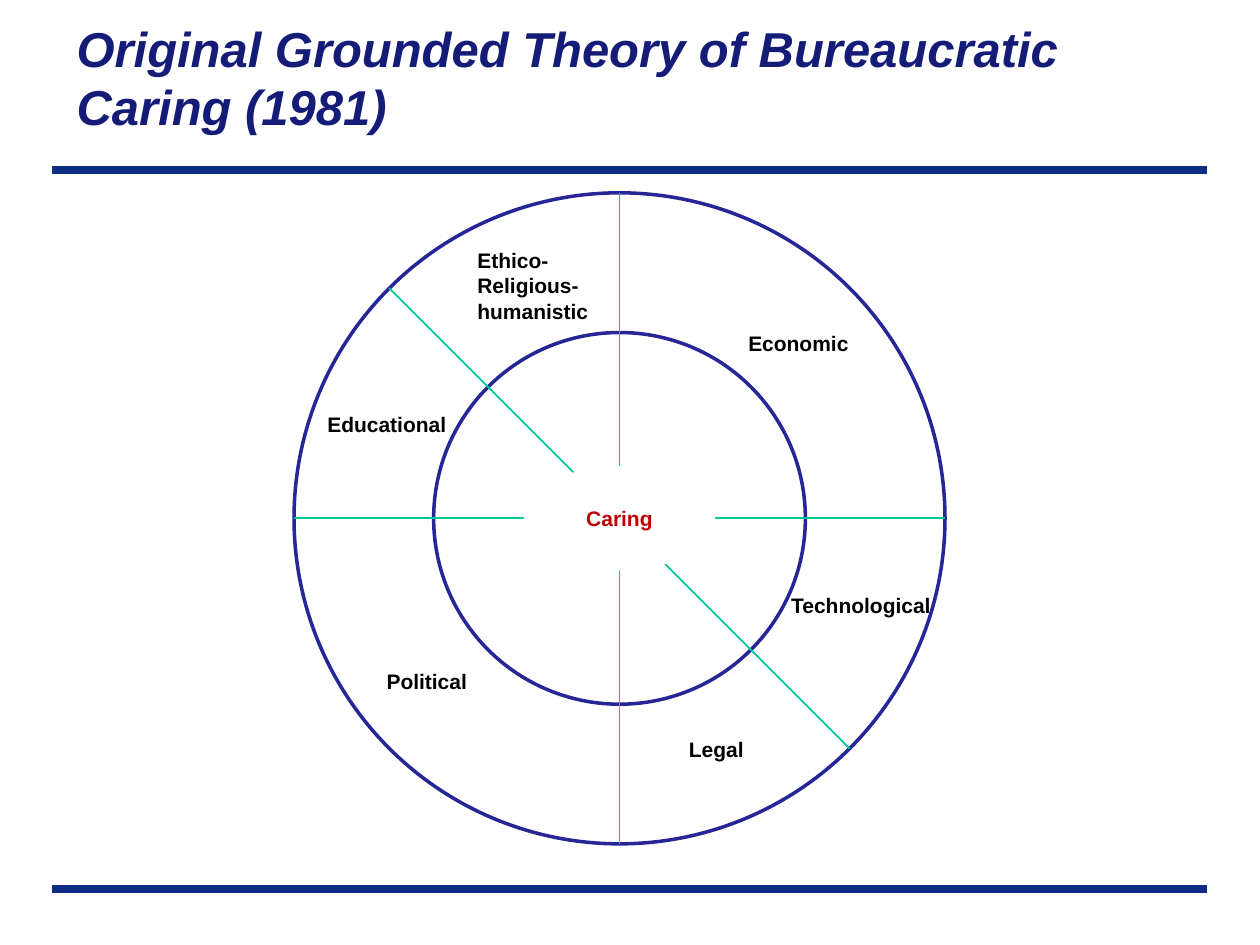
import math
import pptx
import pptx.util
import pptx.dml.color
import pptx.enum.shapes
import pptx.enum.text
import pptx.oxml

Pt = pptx.util.Pt
COLORS = {
    "rule": "0C2D83",
    "ring": "262697",
    "spoke": "00C896",
    "paper": "FFFFFF",
    "label": "000000",
    "core": "C00000",
    "title": "151C77",
}


def add_line(shapes, start, end, color, width):
    connector = shapes.add_connector(
        pptx.enum.shapes.MSO_CONNECTOR.STRAIGHT, *map(Pt, (*start, *end)))
    connector.line.color.rgb = pptx.dml.color.RGBColor.from_string(COLORS[color])
    connector.line.width = Pt(width)
    connector._element.spPr.append(pptx.oxml.parse_xml(
        '<a:effectLst xmlns:a="http://schemas.openxmlformats.org/drawingml/2006/main"/>'))


def write_text(shape, lines, color, size, spacing, italic=None):
    frame = shape.text_frame
    for index, line in enumerate(lines):
        paragraph = frame.add_paragraph() if index else frame.paragraphs[0]
        paragraph.line_spacing = Pt(spacing)
        run = paragraph.add_run()
        run.text = line
        run.font.name = "Arial"
        run.font.size = Pt(size)
        run.font.bold = True
        run.font.italic = italic
        run.font.color.rgb = pptx.dml.color.RGBColor.from_string(COLORS[color])


presentation = pptx.Presentation()
presentation.slide_width = Pt(720)
presentation.slide_height = Pt(540)
slide = presentation.slides.add_slide(presentation.slide_layouts[6])

for y in (508, 97):
    add_line(slide.shapes, (30, y), (690, y), "rule", 4.5)

wheel = slide.shapes.add_group_shape().shapes
center_x, center_y = 354, 296.2
outer_radius, inner_radius = 186, 106.2
diagonal = outer_radius * math.sqrt(0.5)
ellipses = [(outer_radius, outer_radius), (inner_radius, inner_radius), (54.7, 29.9)]
spokes = [(0, outer_radius), (outer_radius, 0), (diagonal, diagonal)]

for index, (radius_x, radius_y) in enumerate(ellipses):
    if index == 2:
        for dx, dy in spokes:
            add_line(wheel, (center_x - dx, center_y - dy),
                     (center_x + dx, center_y + dy), "spoke", 1)
    ellipse = wheel.add_shape(
        pptx.enum.shapes.MSO_SHAPE.OVAL,
        *map(Pt, (center_x - radius_x, center_y - radius_y, 2 * radius_x, 2 * radius_y)))
    ellipse.shadow.inherit = False
    ellipse.fill.solid()
    ellipse.fill.fore_color.rgb = pptx.dml.color.RGBColor.from_string(COLORS["paper"])
    if index < 2:
        ellipse.line.color.rgb = pptx.dml.color.RGBColor.from_string(COLORS["ring"])
        ellipse.line.width = Pt(2)
    else:
        ellipse.line.fill.background()
        ellipse.text_frame.vertical_anchor = pptx.enum.text.MSO_ANCHOR.MIDDLE
        write_text(ellipse, ["Caring"], "core", 12, 14.6)
        ellipse.text_frame.paragraphs[0].alignment = pptx.enum.text.PP_ALIGN.CENTER

labels = [
    (["Ethico-", "Religious-", "humanistic"], 265.7, 137.5, 78.5),
    (["Educational"], 180, 231.2, 83.5),
    (["Political"], 213.8, 378, 61.2),
    (["Legal"], 386.6, 417, 46.1),
    (["Technological"], 445, 335, 95),
    (["Economic"], 420.5, 185, 72.7),
]
for lines, left, top, width in labels:
    label = wheel.add_textbox(Pt(left), Pt(top), Pt(width), Pt(7.2 + 14.6 * len(lines)))
    label.text_frame.word_wrap = False
    label.text_frame.auto_size = pptx.enum.text.MSO_AUTO_SIZE.SHAPE_TO_FIT_TEXT
    write_text(label, lines, "label", 12, 14.6)

title = slide.shapes.add_textbox(Pt(36.7), Pt(5.8), Pt(651.6), Pt(90))
title.text_frame.word_wrap = True
title.text_frame.margin_top = Pt(5.5)
write_text(title, ["Original Grounded Theory of Bureaucratic Caring (1981)"],
           "title", 28, 33.1, italic=True)

presentation.save("out.pptx")
